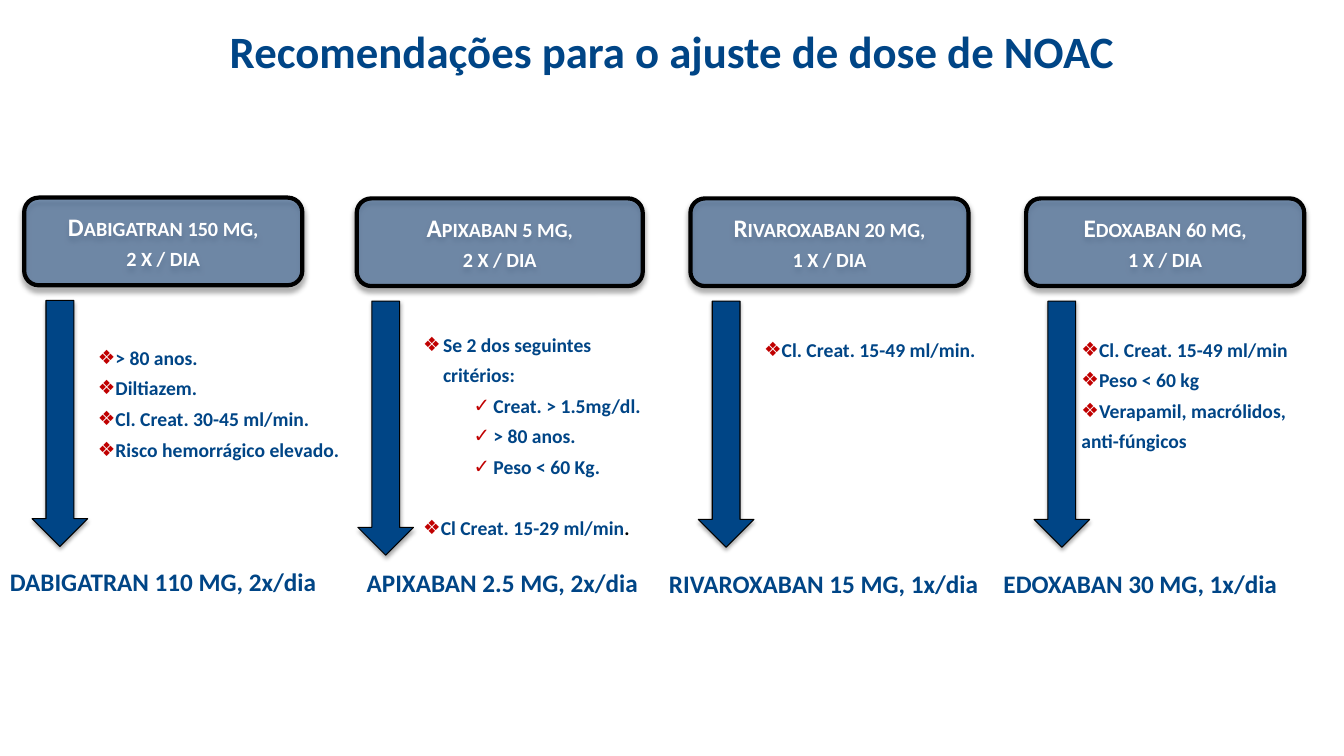
from lxml import etree
from pptx import Presentation
from pptx.dml.color import RGBColor
from pptx.enum.shapes import MSO_SHAPE
from pptx.enum.text import MSO_ANCHOR, MSO_AUTO_SIZE, PP_ALIGN
from pptx.oxml.ns import qn
from pptx.util import Cm, Pt

CARD, ARROW = MSO_SHAPE.ROUNDED_RECTANGLE, MSO_SHAPE.DOWN_ARROW
TOP, MID = MSO_ANCHOR.TOP, MSO_ANCHOR.MIDDLE
LEFT, MIDDLE = PP_ALIGN.LEFT, PP_ALIGN.CENTER
FIXED = MSO_AUTO_SIZE.NONE

BLUE, STEEL, RED, BLACK, WHITE = "004586", "376092", "C00000", "000000", "FFFFFF"
TITLE = "Recomendações para o ajuste de dose de NOAC"

# Lengths in cm; each criterion is (text, level, hanging indent, space before in pt)
DRUGS = [
    dict(card=["Dabigatran 150 mg,", "2 x / dia"], box=(0.61, 4.98, 7.01),
         arrow=(0.81, 7.57, 6.2), list=(2.21, 8.41, 3.3),
         label=("DABIGATRAN 110 MG, 2x/dia", 0, 14.15, 8.38),
         items=[("> 80 anos.", 0, 0, 0), ("Diltiazem.", 0, 0, 0),
                ("Cl. Creat. 30-45 ml/min.", 0, 0, 0),
                ("Risco hemorrágico elevado.", 0, 0, 0)]),
    dict(card=["Apixaban 5 mg,", "2 x / dia"], box=(8.99, 5, 7.21),
         arrow=(9.02, 7.59, 6.4), list=(10.41, 8.08, 5.87),
         label=("APIXABAN 2.5 MG, 2x/dia", 8.99, 14.17, 7.42),
         items=[("Se 2 dos seguintes critérios:", 0, 0.5, 0),
                ("Creat. > 1.5mg/dl.", 1, 0.5, 0), ("> 80 anos.", 1, 0.5, 0),
                ("Peso < 60 Kg.", 1, 0.5, 0),
                ("Cl Creat. 15-29 ml/min", 0, 0, 22)], end="."),
    dict(card=["Rivaroxaban 20 mg,", "1 x / dia"], box=(17.4, 5, 7.01),
         arrow=(17.6, 7.59, 6.2), list=(19, 8.2, 1.2),
         label=("RIVAROXABAN 15 MG, 1x/dia", 16.61, 14.2, 8.46),
         items=[("Cl. Creat. 15-49 ml/min.", 0, 0, 0)]),
    dict(card=["Edoxaban 60 mg,", "1 x / dia"], box=(25.86, 5, 7.01),
         arrow=(26.06, 7.59, 6.2), list=(27, 8.2, 3.5),
         label=("EDOXABAN 30 MG, 1x/dia", 25.04, 14.2, 7.49),
         items=[("Cl. Creat. 15-49 ml/min", 0, 0, 0), ("Peso < 60 kg", 0, 0, 0),
                ("Verapamil, macrólidos, anti-fúngicos", 0, 0, 0)]),
]
CARD_H, ARROW_W, LIST_W, LABEL_H = 2.21, 1.4, 6.6, 1.02
MARKS = "❖✓"


def color(code):
    return RGBColor.from_string(code)


def write(para, text, size=18, ink=BLUE, align=LEFT, small=False):
    para.alignment = align
    run = para.add_run()
    run.text = text
    font = run.font
    font.name, font.size, font.bold = "Calibri", Pt(size), True
    font.color.rgb = color(ink)
    if small:
        run._r.get_or_add_rPr().set("cap", "small")


def place(shape, left, top, width, height):
    shape.left, shape.top = Cm(left), Cm(top)
    shape.width, shape.height = Cm(width), Cm(height)


def lines(frame, count):
    """Return the frame's first paragraph and as many more as needed."""
    return [frame.paragraphs[0]] + [frame.add_paragraph() for _ in range(count - 1)]


def block(kind, spot, fill, line, blur, dist, alpha):
    """Draw a filled, outlined shape with a soft shadow below it."""
    shape = slide.shapes.add_shape(kind, *map(Cm, spot))
    shape.fill.solid()
    shape.fill.fore_color.rgb = color(fill)
    shape.line.color.rgb = color(BLACK)
    shape.line.width = Pt(line)
    shape.shadow.inherit = False
    effects = shape._element.spPr.find(qn("a:effectLst"))
    shade = etree.SubElement(effects, qn("a:outerShdw"), blurRad=str(Pt(blur)),
                             dist=str(Pt(dist)), dir="5400000", rotWithShape="0")
    tint = etree.SubElement(shade, qn("a:srgbClr"), val=BLACK)
    etree.SubElement(tint, qn("a:alpha"), val=str(alpha * 1000))
    return shape


def bullet(para, level, hang):
    para.level = level
    props = para._p.get_or_add_pPr()
    props.set("marL", str(Cm(hang + 1.27 * level)))
    props.set("indent", str(-Cm(hang)))
    tint = etree.SubElement(props, qn("a:buClr"))
    etree.SubElement(tint, qn("a:srgbClr"), val=RED)
    etree.SubElement(props, qn("a:buChar"), char=MARKS[level])


deck = Presentation()
deck.slide_width, deck.slide_height = Cm(33.87), Cm(19.05)
slide = deck.slides.add_slide(deck.slide_layouts.get_by_name("Comparison"))
title, *bodies = slide.placeholders

place(title, 1.7, 0.43, 30.48, 1.68)
title.text_frame.auto_size = FIXED
title.text_frame.vertical_anchor = MID
write(title.text_frame.paragraphs[0], TITLE, size=32, align=MIDDLE)

for drug, body in zip(DRUGS, bodies):
    left, top, width = drug["box"]
    card = block(CARD, (left, top, width, CARD_H), STEEL, 3, 4, 3, 40)
    tint = card._element.spPr.find(qn("a:solidFill")).find(qn("a:srgbClr"))
    etree.SubElement(tint, qn("a:alpha"), val="60000")
    frame = card.text_frame
    frame.word_wrap = True
    frame.vertical_anchor = MID
    for para, text in zip(lines(frame, len(drug["card"])), drug["card"]):
        write(para, text, ink=WHITE, align=MIDDLE, small=True)

    left, top, height = drug["arrow"]
    block(ARROW, (left, top, ARROW_W, height), BLUE, 0.75, 3.1, 1.8, 35)

    left, top, height = drug["list"]
    place(body, left, top, LIST_W, height)
    frame = body.text_frame
    frame.auto_size, frame.vertical_anchor = FIXED, TOP
    paras = lines(frame, len(drug["items"]))
    for para, (text, level, hang, gap) in zip(paras, drug["items"]):
        para.line_spacing, para.space_before = 1.3, Pt(gap)
        bullet(para, level, hang)
        write(para, text, size=14)
    if "end" in drug:
        write(paras[-1], drug["end"], size=14, ink=BLACK)

    text, left, top, width = drug["label"]
    label = slide.shapes.add_textbox(Cm(left), Cm(top), Cm(width), Cm(LABEL_H))
    label.text_frame.word_wrap = False
    write(label.text_frame.paragraphs[0], text)

deck.save("out.pptx")
